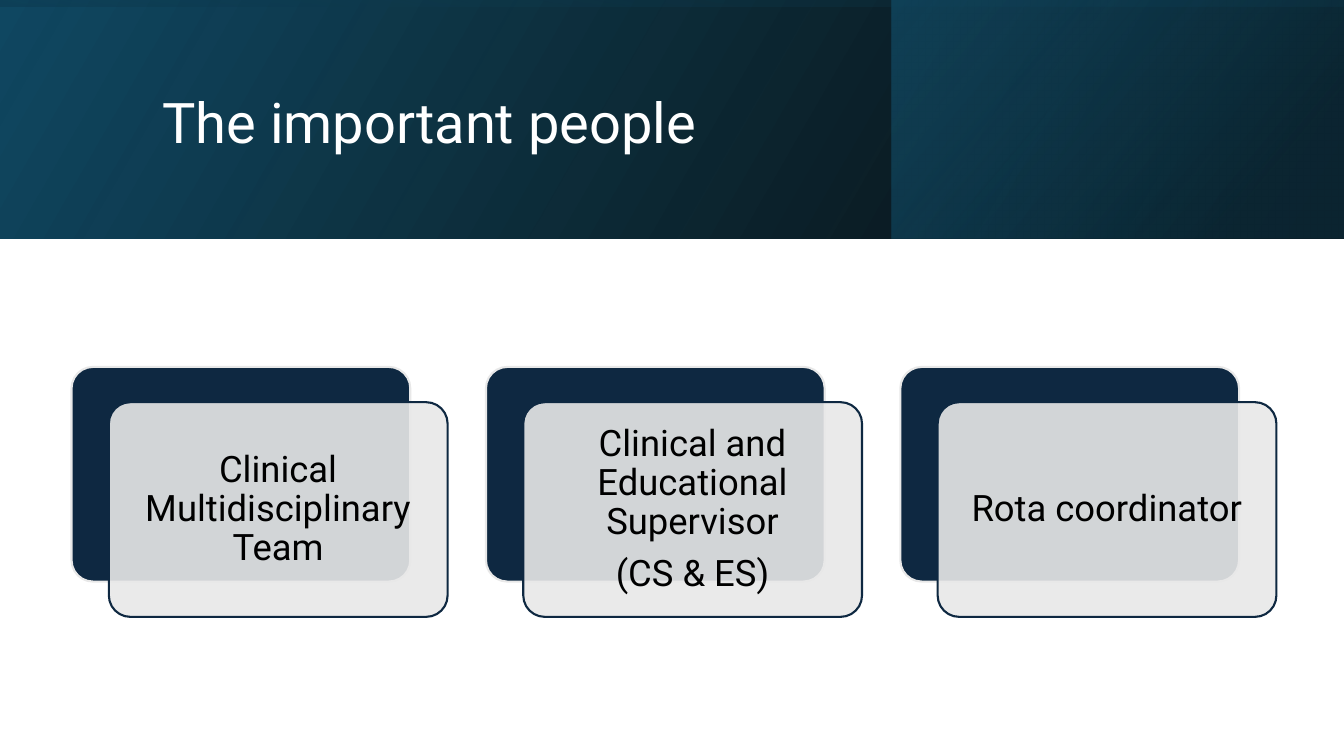
from lxml import etree
from pptx import Presentation
from pptx.dml.color import RGBColor
from pptx.enum.shapes import MSO_SHAPE
from pptx.enum.text import MSO_ANCHOR, MSO_AUTO_SIZE, PP_ALIGN
from pptx.oxml import parse_xml
from pptx.oxml.ns import nsdecls, qn
from pptx.util import Inches, Pt

TITLE = "The important people"
PEOPLE = [
    ["Clinical Multidisciplinary Team"],
    ["Clinical and Educational Supervisor", "(CS & ES)"],
    ["Rota coordinator"],
]

FONT = "Roboto"
WHITE = RGBColor(0xFF, 0xFF, 0xFF)
BLACK = RGBColor(0x00, 0x00, 0x00)
NAVY = RGBColor(0x0E, 0x28, 0x41)
GREY = RGBColor(0xE8, 0xE8, 0xE8)
OCEAN = RGBColor(0x10, 0x48, 0x62)
DEEP_TEAL = RGBColor(0x0B, 0x30, 0x41)
TEAL = RGBColor(0x15, 0x60, 0x82)

SLIDE_WIDTH, SLIDE_HEIGHT = 13.33, 7.5
BAND_HEIGHT = 2.37
BANDS = [
    ((0, 0, SLIDE_WIDTH, BAND_HEIGHT), 0, 330, [(0, BLACK, 96), (100, OCEAN, 100)]),
    ((8.84, 0, 4.49, BAND_HEIGHT), 0, 320, [(19, DEEP_TEAL, 68), (100, TEAL, 48)]),
    (((SLIDE_WIDTH - BAND_HEIGHT) / 2, (BAND_HEIGHT - SLIDE_WIDTH) / 2, BAND_HEIGHT, SLIDE_WIDTH),
     270, 350, [(23, OCEAN, 16), (99, BLACK, 45)]),
]
CARD_LEFT, CARD_TOP, CARD_WIDTH, CARD_HEIGHT = 0.71, 3.64, 3.36, 2.13
CARD_PITCH = 4.11
FRONT_SHIFT_X, FRONT_SHIFT_Y = 0.37, 0.35


def add_band(page, place, rotation, angle, stops):
    band = page.shapes.add_shape(MSO_SHAPE.RECTANGLE, *map(Inches, place))
    band.shadow.inherit = False
    band.rotation = rotation
    band.line.fill.background()
    band.fill.background()
    properties = band._element.spPr
    properties.find(qn("a:xfrm")).set("flipH", "1")
    stop_xml = "".join(
        f'<a:gs pos="{position * 1000}"><a:srgbClr val="{color}">'
        f'<a:alpha val="{opacity * 1000}"/></a:srgbClr></a:gs>'
        for position, color, opacity in stops
    )
    gradient = parse_xml(
        f'<a:gradFill {nsdecls("a")} rotWithShape="1"><a:gsLst>{stop_xml}</a:gsLst>'
        f'<a:lin ang="{angle * 60000}" scaled="0"/></a:gradFill>'
    )
    properties.replace(properties.find(qn("a:noFill")), gradient)


def add_card(page, left, top, fill_color, line_color):
    card = page.shapes.add_shape(
        MSO_SHAPE.ROUNDED_RECTANGLE,
        Inches(left), Inches(top), Inches(CARD_WIDTH), Inches(CARD_HEIGHT),
    )
    card.adjustments[0] = 0.1
    card.shadow.inherit = False
    card.fill.solid()
    card.fill.fore_color.rgb = fill_color
    card.line.color.rgb = line_color
    card.line.width = Pt(1.5)
    return card


def write_label(card, lines):
    frame = card.text_frame
    frame.word_wrap = True
    frame.vertical_anchor = MSO_ANCHOR.MIDDLE
    frame.margin_left = frame.margin_right = Inches(0.11)
    frame.margin_top = frame.margin_bottom = Inches(0.11)
    for index, line in enumerate(lines):
        para = frame.paragraphs[0] if index == 0 else frame.add_paragraph()
        para.text = line
        para.alignment = PP_ALIGN.CENTER
        para.line_spacing = 0.9
        para.space_after = Pt(9)
        style_font(para.font, 26, BLACK)


def style_font(font, size, color):
    font.name = FONT
    font.size = Pt(size)
    font.color.rgb = color


def main():
    deck = Presentation()
    deck.slide_width, deck.slide_height = Inches(SLIDE_WIDTH), Inches(SLIDE_HEIGHT)
    page = deck.slides.add_slide(deck.slide_layouts[5])

    for band in BANDS:
        add_band(page, *band)

    title = page.shapes.title
    page.shapes._spTree.append(title._element)
    title.left, title.top = Inches(1.51), Inches(0.38)
    title.width, title.height = Inches(10.63), Inches(1.72)
    title.text_frame.text = TITLE
    title.text_frame.auto_size = MSO_AUTO_SIZE.NONE
    title.text_frame.vertical_anchor = MSO_ANCHOR.MIDDLE
    heading = title.text_frame.paragraphs[0]
    heading.alignment = PP_ALIGN.LEFT
    heading.line_spacing = 0.9
    style_font(heading.font, 40, WHITE)

    for index, lines in enumerate(PEOPLE):
        left = CARD_LEFT + index * CARD_PITCH
        add_card(page, left, CARD_TOP, NAVY, GREY)
        front = add_card(page, left + FRONT_SHIFT_X, CARD_TOP + FRONT_SHIFT_Y, GREY, NAVY)
        color = front._element.spPr.find(qn("a:solidFill")).find(qn("a:srgbClr"))
        etree.SubElement(color, qn("a:alpha")).set("val", "90000")
        write_label(front, lines)

    deck.save("out.pptx")


if __name__ == "__main__":
    main()
